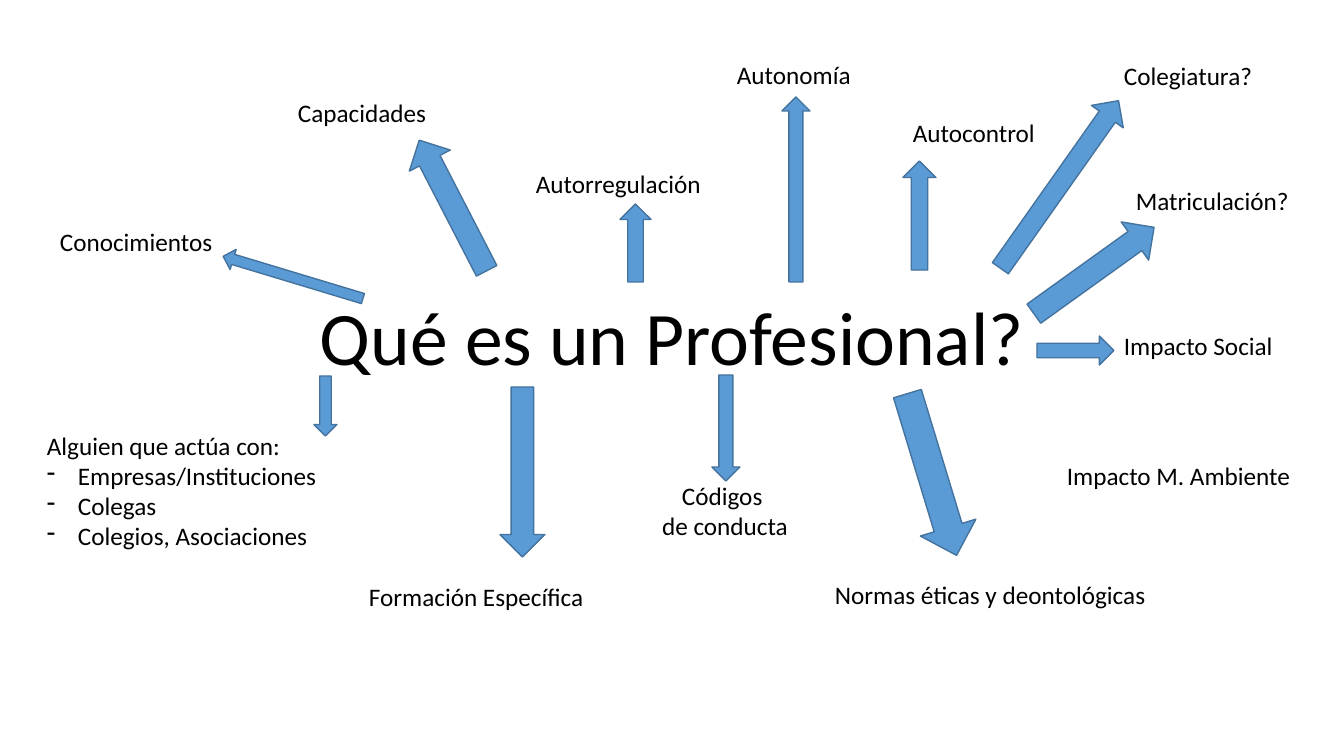
import pptx
import pptx.util
import pptx.dml.color
import pptx.enum.shapes
import pptx.enum.text
import lxml.etree

SLIDE = (1344, 756)
TITLE = ("Qué es un Profesional?", (168, 294, 1008, 93))
LABELS = [
    ("Conocimientos", 50, 221, 180),
    ("Capacidades", 288, 92, 156),
    ("Formación Específica", 359, 576, 243),
    ("Autonomía", 727, 54, 141),
    ("Autocontrol", 903, 112, 149),
    ("Colegiatura?", 1114, 55, 156),
    ("Matriculación?", 1126, 180, 180),
    ("Autorregulación", 526, 163, 193),
    ("Impacto Social", 1114, 325, 176),
    ("Impacto M. Ambiente", 1057, 455, 246),
    ("Normas éticas y deontológicas", 825, 574, 335),
]
CODES = (["Códigos ", "de conducta"], 651, 475, 148)
ACTS_WITH = (["Alguien que actúa con:", "Empresas/Instituciones", "Colegas",
              "Colegios, Asociaciones"], 37, 425, 293)
ARROWS = [
    ("DOWN", 903, 390, 58, 169, 343.1),
    ("DOWN", 712, 375, 28, 106, 0),
    ("DOWN", 500, 387, 45, 170, 0),
    ("DOWN", 314, 376, 23, 60, 0),
    ("LEFT", 220, 267, 146, 21, 16.8),
    ("UP", 430, 132, 46, 147, 332.7),
    ("UP", 620, 204, 31, 78, 0),
    ("UP", 782, 97, 28, 185, 0),
    ("UP", 903, 161, 33, 109, 0),
    ("UP", 1040, 82, 39, 205, 35.2),
    ("RIGHT", 1037, 336, 77, 29, 0),
    ("RIGHT", 1020, 247, 148, 47, 324.3),
]
FONT, BLACK, BLUE, EDGE = "Calibri", "000000", "5B9BD5", "43739E"
LINE_H, PAD, INDENT = 30, 10, 31
ALIGN = pptx.enum.text.PP_ALIGN


def px(n):
    return round(n * 914400 / 100.8)


def color(value):
    return pptx.dml.color.RGBColor.from_string(value)


def write(tf, lines, size=18, align=ALIGN.LEFT, spacing=None, bullets_from=None):
    for i, text in enumerate(lines):
        p = tf.paragraphs[0] if i == 0 else tf.add_paragraph()
        p.alignment = align
        if spacing:
            p.line_spacing = spacing
        if bullets_from is not None and i >= bullets_from:
            pPr = p._p.get_or_add_pPr()
            pPr.set("marL", str(px(INDENT)))
            pPr.set("indent", str(-px(INDENT)))
            bullet = lxml.etree.SubElement(pPr, pptx.oxml.ns.qn("a:buChar"))
            bullet.set("char", "-")
        r = p.add_run()
        r.text = text
        r.font.name = FONT
        r.font.size = pptx.util.Pt(size)
        r.font.color.rgb = color(BLACK)


def add_label(s, lines, x, y, w, **fmt):
    sp = s.shapes.add_textbox(px(x), px(y), px(w), px(PAD + LINE_H * len(lines)))
    tf = sp.text_frame
    tf.word_wrap = False
    tf.auto_size = pptx.enum.text.MSO_AUTO_SIZE.SHAPE_TO_FIT_TEXT
    write(tf, lines, **fmt)


def add_arrow(s, direction, x, y, w, h, rotation):
    kind = pptx.enum.shapes.MSO_SHAPE[direction + "_ARROW"]
    sp = s.shapes.add_shape(kind, px(x), px(y), px(w), px(h))
    sp.rotation = rotation
    sp.shadow.inherit = False
    sp.fill.solid()
    sp.fill.fore_color.rgb = color(BLUE)
    sp.line.color.rgb = color(EDGE)
    sp.line.width = pptx.util.Pt(1)


def main():
    prs = pptx.Presentation()
    prs.slide_width, prs.slide_height = map(px, SLIDE)
    s = prs.slides.add_slide(prs.slide_layouts.get_by_name("Title Only"))

    text, box = TITLE
    title = s.shapes.title
    title.left, title.top, title.width, title.height = map(px, box)
    tf = title.text_frame
    tf.auto_size = pptx.enum.text.MSO_AUTO_SIZE.NONE
    tf.vertical_anchor = pptx.enum.text.MSO_ANCHOR.BOTTOM
    write(tf, [text], size=54, align=ALIGN.CENTER, spacing=0.9)

    for text, x, y, w in LABELS:
        add_label(s, [text], x, y, w)
    add_label(s, *CODES, align=ALIGN.CENTER)
    add_label(s, *ACTS_WITH, bullets_from=1)
    for arrow in ARROWS:
        add_arrow(s, *arrow)
    prs.save("out.pptx")


if __name__ == "__main__":
    main()
